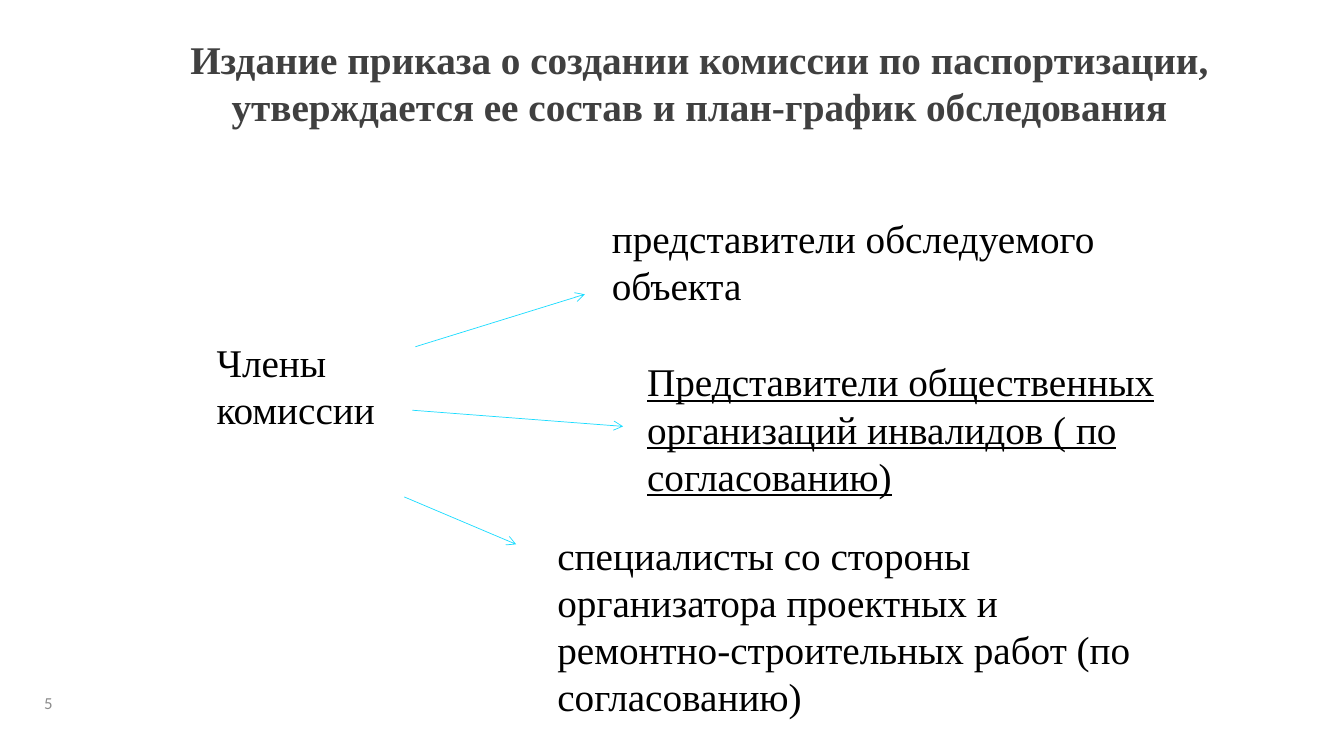
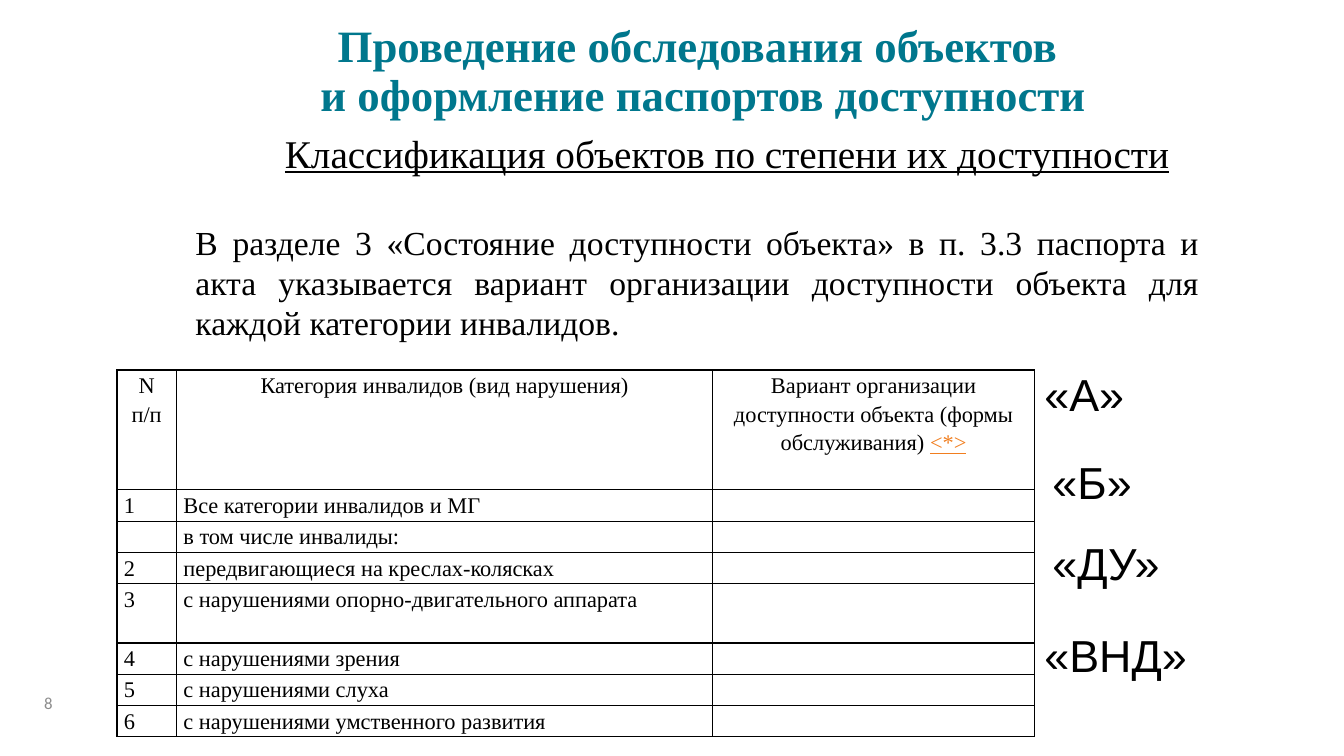
"""Build two slides on accessibility surveys: the commission and the object classification."""
from dataclasses import dataclass

from lxml import etree
from pptx import Presentation
from pptx.dml.color import RGBColor
from pptx.enum import shapes, text
from pptx.oxml import ns
from pptx.util import Inches, Pt

COLORS = {
    "ink": "000000",
    "heading": "404040",
    "teal": "00778D",
    "arrow": "1BDCFF",
    "link": "F17E1F",
    "number": "8C8C8C",
    "paper": "FFFFFF",
}
SERIF = "Times New Roman"
ALIGN = text.PP_ALIGN


@dataclass(frozen=True)
class Style:
    size: float = 28
    color: str = "ink"
    font: str = SERIF
    bold: bool = False
    underline: bool = False


@dataclass(frozen=True)
class Label:
    left: float
    top: float
    width: float
    height: float
    lines: tuple[str, ...]
    style: Style = Style()
    align: ALIGN = ALIGN.LEFT


@dataclass(frozen=True)
class Arrow:
    start: tuple[float, float]
    end: tuple[float, float]


BODY = Style()
UNDERLINED = Style(underline=True)
HEADING = Style(color="heading", bold=True)
BANNER = Style(32, "teal", bold=True)
VARIANT = Style(32, font="Arial")
NUMBER = Style(12, "number", "Calibri")
CELL = Style(16)
CELL_LINK = Style(16, "link", underline=True)

COMMISSION_LABELS = (
    Label(2.05, 3.31, 2.0, 1.04, ("Члены", "комиссии")),
    Label(5.97, 2.08, 5.69, 1.04, ("представители обследуемого объекта",)),
    Label(6.32, 3.5, 5.69, 1.51,
          ("Представители общественных организаций инвалидов ( по согласованию)",), UNDERLINED),
    Label(5.43, 5.22, 6.1, 1.99,
          ("специалисты со стороны организатора проектных и "
           "ремонтно-строительных работ (по согласованию)",)),
    Label(1.59, 0.3, 10.69, 1.04,
          ("Издание приказа о создании комиссии по паспортизации, "
           "утверждается ее состав и план-график обследования",), HEADING, ALIGN.CENTER),
)
COMMISSION_ARROWS = (
    Arrow((4.12, 3.44), (5.8, 2.92)),
    Arrow((4.09, 4.07), (6.18, 4.23)),
    Arrow((4.01, 4.93), (5.12, 5.4)),
)
BANNER_LINES = ("Проведение обследования объектов ", "и оформление паспортов доступности")
CLASSIFICATION_LABELS = (
    Label(1.86, 1.23, 10.7, 0.57, ("Классификация объектов по степени их доступности",),
          UNDERLINED, ALIGN.CENTER),
    Label(1.84, 2.15, 10.15, 1.31,
          ("В разделе 3 «Состояние доступности объекта» в п. 3.3 паспорта и акта указывается "
           "вариант организации доступности объекта для каждой категории инвалидов.",),
          Style(24), ALIGN.JUSTIFY),
    Label(10.26, 3.59, 1.36, 0.64, ("«А»",), VARIANT),
    Label(10.34, 4.46, 1.36, 0.64, ("«Б»",), VARIANT),
    Label(10.34, 5.27, 1.83, 0.64, ("«ДУ»",), VARIANT),
    Label(10.26, 6.18, 2.31, 0.64, ("«ВНД»",), VARIANT),
)
HEADERS = (
    "N п/п",
    "Категория инвалидов (вид нарушения)",
    "Вариант организации доступности объекта (формы обслуживания) ",
)
CATEGORIES = (
    ("1", "Все категории инвалидов и МГ"),
    ("", "в том числе инвалиды:"),
    ("2", "передвигающиеся на креслах-колясках"),
    ("3", "с нарушениями опорно-двигательного аппарата"),
    ("4", "с нарушениями зрения"),
    ("5", "с нарушениями слуха"),
    ("6", "с нарушениями умственного развития"),
)
COLUMN_WIDTHS = (0.59, 5.32, 3.19)
ROW_HEIGHTS = (1.19, 0.31, 0.31, 0.31, 0.59, 0.31, 0.31, 0.31)


def rgb(name: str) -> RGBColor:
    """Return the named colour."""
    return RGBColor.from_string(COLORS[name])


def apply_style(font, style: Style) -> None:
    """Set the font attributes of a run or paragraph."""
    font.size = Pt(style.size)
    font.name = style.font
    font.bold = style.bold
    font.underline = style.underline
    font.color.rgb = rgb(style.color)


def add_span(para, content: str, style: Style) -> None:
    """Append one styled run."""
    span = para.add_run()
    span.text = content
    apply_style(span.font, style)


def write_lines(frame, lines: tuple[str, ...], style: Style, align: ALIGN,
                spacing: float = 1.0) -> None:
    """Fill a text frame with one paragraph per line."""
    frame.word_wrap = True
    for index, line in enumerate(lines):
        para = frame.add_paragraph() if index else frame.paragraphs[0]
        para.alignment = align
        para.line_spacing = spacing
        add_span(para, line, style)


def add_label(page, label: Label, anchor=text.MSO_ANCHOR.TOP) -> None:
    """Place a text box on the page."""
    box = page.shapes.add_textbox(Inches(label.left), Inches(label.top),
                                  Inches(label.width), Inches(label.height))
    box.text_frame.vertical_anchor = anchor
    write_lines(box.text_frame, label.lines, label.style, label.align)


def add_arrow(page, arrow: Arrow) -> None:
    """Draw a thin line with an open arrowhead at its end."""
    line = page.shapes.add_connector(
        shapes.MSO_CONNECTOR.STRAIGHT, *(Inches(value) for value in arrow.start + arrow.end))
    line.line.color.rgb = rgb("arrow")
    line.line.width = Pt(0.5)
    etree.SubElement(line.line._get_or_add_ln(), ns.qn("a:tailEnd"), type="arrow")
    etree.SubElement(line._element.spPr, ns.qn("a:effectLst"))


def add_banner(page) -> None:
    """Draw the rounded title plate."""
    plate = page.shapes.add_shape(shapes.MSO_SHAPE.ROUNDED_RECTANGLE, Inches(1.84),
                                  Inches(0.21), Inches(10.27), Inches(1.02))
    plate.adjustments[0] = 0.1
    plate.shadow.inherit = False
    plate.fill.solid()
    plate.fill.fore_color.rgb = rgb("paper")
    plate.line.color.rgb = rgb("paper")
    frame = plate.text_frame
    frame.margin_left = frame.margin_right = Inches(0.07)
    frame.vertical_anchor = text.MSO_ANCHOR.MIDDLE
    write_lines(frame, BANNER_LINES, BANNER, ALIGN.CENTER, 0.9)


def add_borders(cell) -> None:
    """Outline a table cell in black."""
    properties = cell._tc.get_or_add_tcPr()
    for index, side in enumerate(("lnL", "lnR", "lnT", "lnB")):
        edge = etree.Element(ns.qn(f"a:{side}"), w=str(Pt(1)))
        fill = etree.SubElement(edge, ns.qn("a:solidFill"))
        etree.SubElement(fill, ns.qn("a:srgbClr"), val=COLORS["ink"])
        properties.insert(index, edge)


def fill_cell(cell, content: str, align: ALIGN) -> None:
    """Write and outline one table cell."""
    cell.fill.background()
    cell.margin_left = cell.margin_right = Inches(0.07)
    cell.margin_top = cell.margin_bottom = 0
    para = cell.text_frame.paragraphs[0]
    para.alignment = align
    para.line_spacing = 1.15
    apply_style(para.font, CELL)
    if content:
        add_span(para, content, CELL)
    add_borders(cell)


def add_category_table(page) -> None:
    """Build the table of disability categories."""
    grid = page.shapes.add_table(len(ROW_HEIGHTS), len(COLUMN_WIDTHS), Inches(1.16), Inches(3.67),
                                 Inches(sum(COLUMN_WIDTHS)), Inches(sum(ROW_HEIGHTS))).table
    grid.horz_banding = False
    for column, width in zip(grid.columns, COLUMN_WIDTHS):
        column.width = Inches(width)
    for row, height in zip(grid.rows, ROW_HEIGHTS):
        row.height = Inches(height)
    records = (HEADERS, *((*category, "") for category in CATEGORIES))
    for row_index, record in enumerate(records):
        align = ALIGN.LEFT if row_index else ALIGN.CENTER
        for column_index, content in enumerate(record):
            fill_cell(grid.cell(row_index, column_index), content, align)
    add_span(grid.cell(0, 2).text_frame.paragraphs[0], "<*>", CELL_LINK)


def add_page(deck, number: int):
    """Add a blank page with its number."""
    page = deck.slides.add_slide(deck.slide_layouts[6])
    add_label(page, Label(0.34, 6.86, 0.79, 0.22, (str(number),), NUMBER), text.MSO_ANCHOR.MIDDLE)
    return page


def main() -> None:
    """Build and save the deck."""
    deck = Presentation()
    deck.slide_width, deck.slide_height = Inches(13.33), Inches(7.5)

    commission = add_page(deck, 5)
    for label in COMMISSION_LABELS:
        add_label(commission, label)
    for arrow in COMMISSION_ARROWS:
        add_arrow(commission, arrow)

    classification = add_page(deck, 8)
    add_banner(classification)
    add_category_table(classification)
    for label in CLASSIFICATION_LABELS:
        add_label(classification, label)

    deck.save("out.pptx")


if __name__ == "__main__":
    main()
